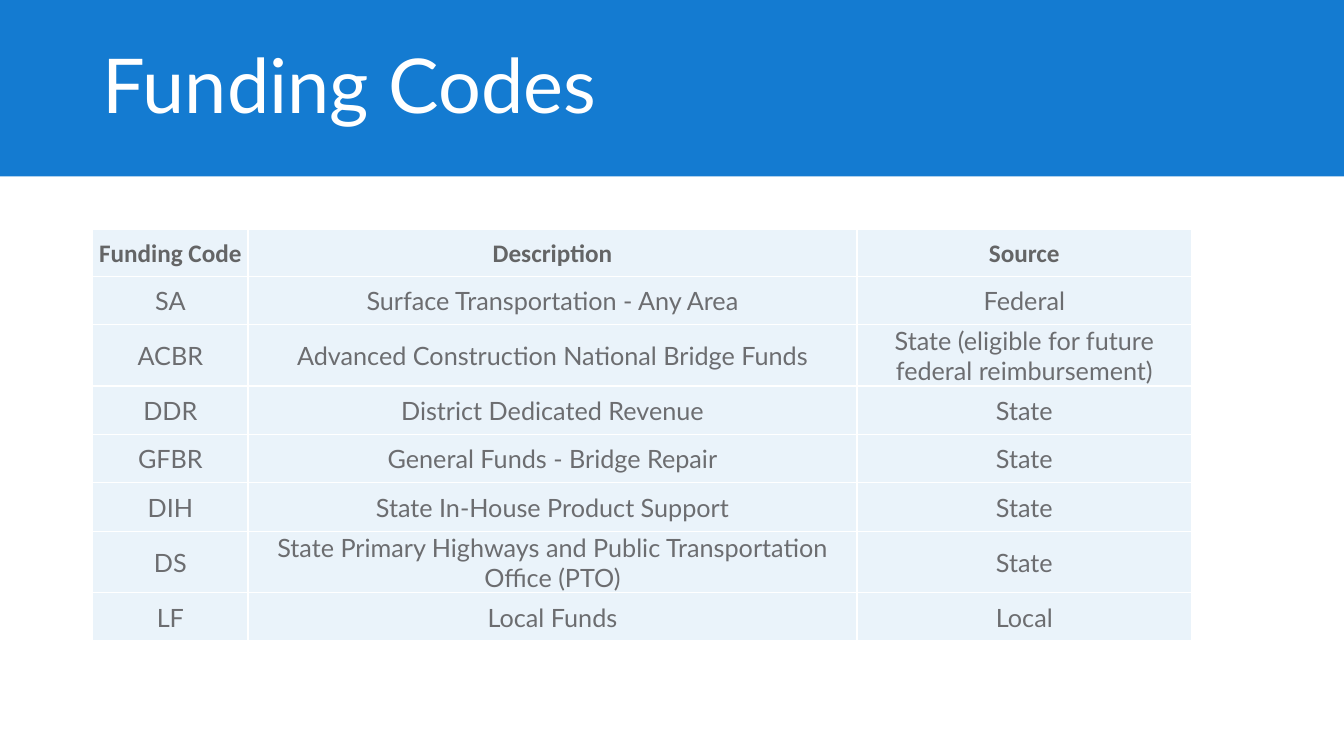
from lxml import etree
from pptx import Presentation
from pptx.dml.color import RGBColor
from pptx.enum.shapes import MSO_SHAPE as Shape
from pptx.enum.text import MSO_ANCHOR as Anchor, MSO_AUTO_SIZE as AutoSize, PP_ALIGN as Align
from pptx.oxml.ns import qn
from pptx.util import Inches, Pt

BLUE, PALE, WHITE = "147BD1", "EAF3FA", "FFFFFF"
HEAD_GREY, BODY_GREY = "646566", "6C6D70"

COL_WIDTHS = [1.54, 6.04, 3.32]
HEAD_HEIGHT, ROW_HEIGHT = 0.46, 0.48
FUNDING = [
    ("Funding Code", "Description", "Source"),
    ("SA", "Surface Transportation - Any Area", "Federal"),
    ("ACBR", "Advanced Construction National Bridge Funds",
     "State (eligible for future federal reimbursement)"),
    ("DDR", "District Dedicated Revenue", "State"),
    ("GFBR", "General Funds - Bridge Repair", "State"),
    ("DIH", "State In-House Product Support", "State"),
    ("DS", "State Primary Highways and Public Transportation Office (PTO)", "State"),
    ("LF", "Local Funds", "Local"),
]


def rgb(color):
    return RGBColor.from_string(color)


def add_run(p, text, size, font, color, bold=False):
    r = p.add_run()
    r.text = text
    r.font.size, r.font.name, r.font.bold = Pt(size), font, bold
    r.font.color.rgb = rgb(color)


def add_borders(cell, color, width):
    tc_pr = cell._tc.get_or_add_tcPr()
    for i, side in enumerate(("lnL", "lnR", "lnT", "lnB")):
        ln = etree.Element(qn(f"a:{side}"), w=str(Pt(width)))
        fill = etree.SubElement(ln, qn("a:solidFill"))
        etree.SubElement(fill, qn("a:srgbClr"), val=color)
        tc_pr.insert(i, ln)


def add_header(s, left, top, width, height):
    # Blue band, sent behind the title
    sp = s.shapes.add_shape(Shape.RECTANGLE, Inches(left), Inches(top),
                            Inches(width), Inches(height))
    sp.shadow.inherit = False
    sp.fill.solid()
    sp.fill.fore_color.rgb = rgb(BLUE)
    sp.line.fill.background()
    s.shapes.element.insert(2, sp.element)

    # Title
    title = s.shapes.title
    title.left, title.top = Inches(left + 0.92), Inches(top + 0.32)
    title.width, title.height = Inches(11.5), Inches(1.02)
    tf = title.text_frame
    tf.word_wrap, tf.auto_size = True, AutoSize.NONE
    tf.vertical_anchor = Anchor.BOTTOM
    p = tf.paragraphs[0]
    p.alignment, p.line_spacing = Align.LEFT, 0.9
    add_run(p, "Funding Codes", 54, "Lato", WHITE)


def fill_cell(cell, text, is_head):
    cell.fill.solid()
    cell.fill.fore_color.rgb = rgb(PALE)
    add_borders(cell, WHITE, 1)
    cell.vertical_anchor = Anchor.MIDDLE
    cell.margin_left = cell.margin_right = cell.margin_top = Inches(0.01)
    cell.margin_bottom = 0
    p = cell.text_frame.paragraphs[0]
    p.alignment = Align.CENTER
    if is_head:
        add_run(p, text, 18, "Calibri", HEAD_GREY, bold=True)
    else:
        add_run(p, text, 18, "Lato", BODY_GREY)


def add_funding_table(s, left, top, width, height):
    table = s.shapes.add_table(len(FUNDING), len(COL_WIDTHS), Inches(left), Inches(top),
                               Inches(width), Inches(height)).table
    table.horz_banding = False
    for col, col_width in zip(table.columns, COL_WIDTHS):
        col.width = Inches(col_width)
    for i, (row, texts) in enumerate(zip(table.rows, FUNDING)):
        row.height = Inches(ROW_HEIGHT if i else HEAD_HEIGHT)
        for cell, text in zip(row.cells, texts):
            fill_cell(cell, text, is_head=i == 0)


def main():
    prs = Presentation()
    prs.slide_width, prs.slide_height = Inches(13.33), Inches(7.5)
    s = prs.slides.add_slide(prs.slide_layouts[5])
    add_header(s, 0, 0, 13.33, 1.75)
    add_funding_table(s, 0.92, 2.28, sum(COL_WIDTHS),
                      HEAD_HEIGHT + ROW_HEIGHT * (len(FUNDING) - 1))
    prs.save("out.pptx")


if __name__ == "__main__":
    main()
